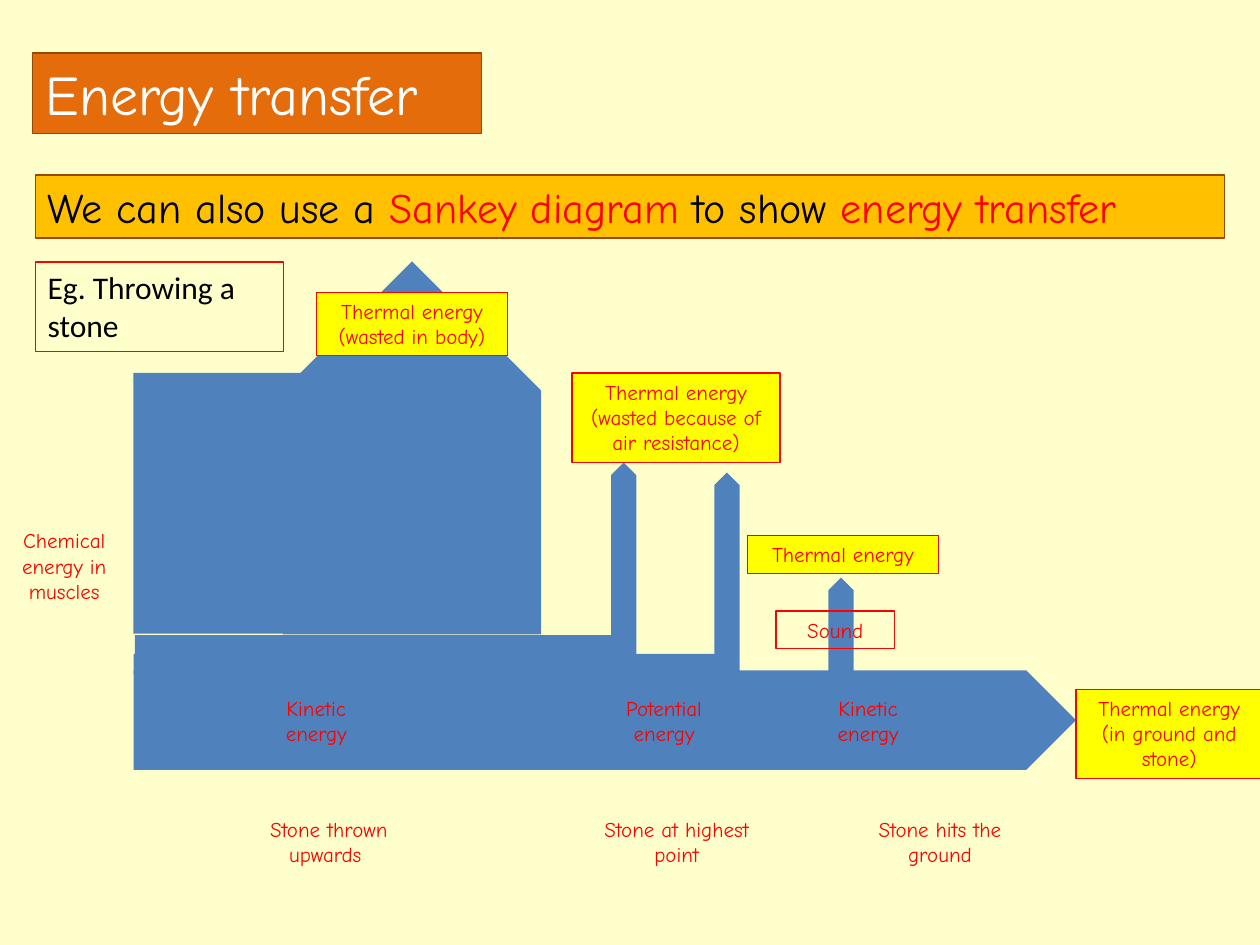
import pptx
import pptx.util
import pptx.dml.color
import pptx.enum.shapes
import pptx.enum.text

Inches = pptx.util.Inches
Pt = pptx.util.Pt
MSO_SHAPE = pptx.enum.shapes.MSO_SHAPE
PP_ALIGN = pptx.enum.text.PP_ALIGN
MSO_AUTO_SIZE = pptx.enum.text.MSO_AUTO_SIZE

COLORS = {
    "background": "FFFFCC",
    "title": "E46C0A",
    "banner": "FFC000",
    "brown": "984807",
    "flow": "4F81BD",
    "yellow": "FFFF00",
    "red": "FF0000",
    "black": "000000",
    "white": "FFFFFF",
}


def rgb(name):
    return pptx.dml.color.RGBColor.from_string(COLORS[name])


def add_text(text, at=None, sp=None, size=12, font="Comic Neue", color="red",
             align=PP_ALIGN.CENTER, fill=None, line=None,
             auto_size=MSO_AUTO_SIZE.SHAPE_TO_FIT_TEXT):
    box = [Inches(v) for v in at]
    if sp is None:
        sp = s.shapes.add_textbox(*box)
    sp.left, sp.top, sp.width, sp.height = box
    if fill:
        sp.fill.solid()
        sp.fill.fore_color.rgb = rgb(fill)
    if line:
        sp.line.color.rgb = rgb(line)
        sp.line.width = Pt(0.75)
    tf = sp.text_frame
    tf.word_wrap = True
    tf.auto_size = auto_size
    tf.vertical_anchor = pptx.enum.text.MSO_ANCHOR.TOP
    p = tf.paragraphs[0]
    p.alignment = align
    for part, part_color in [(text, color)] if isinstance(text, str) else text:
        r = p.add_run()
        r.text = part
        r.font.size = Pt(size)
        r.font.name = font
        r.font.color.rgb = rgb(part_color)


prs = pptx.Presentation()
prs.slide_width, prs.slide_height = Inches(10), Inches(7.5)
s = prs.slides.add_slide(prs.slide_layouts[5])
s.background.fill.solid()
s.background.fill.fore_color.rgb = rgb("background")

add_text("Energy transfer", at=(0.26, 0.42, 3.56, 0.64), sp=s.shapes.title, size=32,
         color="white", align=PP_ALIGN.LEFT, fill="title", line="brown",
         auto_size=MSO_AUTO_SIZE.NONE)
add_text([("We can also use a ", "black"), ("Sankey diagram ", "red"),
          ("to show ", "black"), ("energy transfer", "red")],
         at=(0.28, 1.39, 9.44, 0.5), size=24, align=PP_ALIGN.LEFT,
         fill="banner", line="brown")

BAR, ARROW = MSO_SHAPE.RECTANGLE, MSO_SHAPE.PENTAGON
flows = [
    (ARROW, 1.06, 5.32, 7.48, 0.79, 0),
    (ARROW, 6.29, 4.87, 0.77, 0.2, 270),
    (BAR, 1.06, 5.19, 4.62, 0.16, 0),
    (ARROW, 4.97, 4.45, 1.6, 0.2, 270),
    (BAR, 1.07, 5.04, 3.78, 0.16, 0),
    (ARROW, 4.15, 4.37, 1.6, 0.2, 270),
    (BAR, 1.06, 2.96, 1.57, 2.07, 0),
    (ARROW, 1.79, 2.53, 2.96, 2.05, 270),
]
for kind, x, y, w, h, rotation in flows:
    sp = s.shapes.add_shape(kind, Inches(x), Inches(y), Inches(w), Inches(h))
    sp.rotation = rotation
    sp.shadow.inherit = False
    sp.fill.solid()
    sp.fill.fore_color.rgb = rgb("flow")
    sp.line.fill.background()

add_text("Eg. Throwing a stone", at=(0.28, 2.08, 1.97, 0.71), size=18, font="Calibri",
         color="black", align=PP_ALIGN.LEFT, line="red")

add_text("Chemical energy in muscles", at=(0.04, 4.14, 0.94, 0.71))
for text, x in [("Kinetic energy", 2.04), ("Potential energy", 4.8), ("Kinetic energy", 6.42)]:
    add_text(text, at=(x, 5.47, 0.94, 0.5))
for text, x in [("Stone thrown upwards ", 1.85), ("Stone at highest point", 4.61),
                ("Stone hits the ground", 6.7)]:
    add_text(text, at=(x, 6.43, 1.52, 0.5))

outputs = [
    ("Thermal energy (wasted in body)", (2.51, 2.32, 1.52, 0.5), "yellow"),
    ("Thermal energy (wasted because of air resistance)", (4.54, 2.96, 1.65, 0.71), "yellow"),
    ("Thermal energy", (5.93, 4.25, 1.52, 0.3), "yellow"),
    ("Thermal energy (in ground and stone)", (8.54, 5.47, 1.48, 0.71), "yellow"),
    ("Sound", (6.16, 4.85, 0.94, 0.3), None),
]
for text, at, fill in outputs:
    add_text(text, at=at, fill=fill, line="red")

prs.save("out.pptx")
